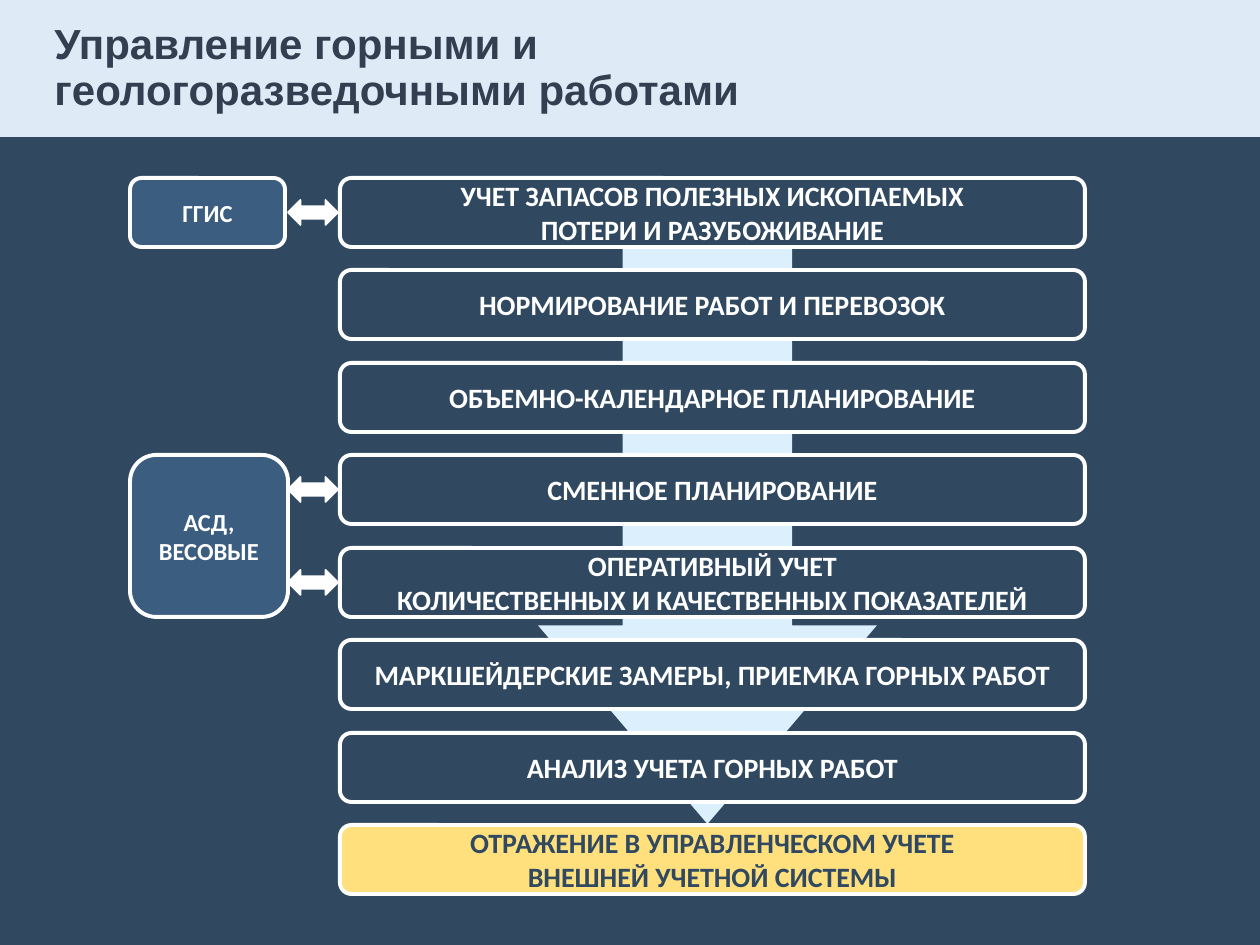
from pptx import Presentation
from pptx import util as u
from pptx.dml.color import RGBColor
from pptx.enum import shapes, text

PX = u.Inches(1) // 126
NAVY = RGBColor(0x30, 0x49, 0x61)
BLUE = RGBColor(0x3A, 0x5D, 0x80)
PALE = RGBColor(0xDE, 0xEB, 0xF7)
ICE = RGBColor(0xDB, 0xF0, 0xFC)
YELLOW = RGBColor(0xFF, 0xE0, 0x7D)
SLATE = RGBColor(0x33, 0x3F, 0x50)
WHITE = RGBColor(0xFF, 0xFF, 0xFF)
KIND = shapes.MSO_SHAPE

STEPS = [
    "УЧЕТ ЗАПАСОВ ПОЛЕЗНЫХ ИСКОПАЕМЫХ\vПОТЕРИ И РАЗУБОЖИВАНИЕ",
    "НОРМИРОВАНИЕ РАБОТ И ПЕРЕВОЗОК",
    "ОБЪЕМНО-КАЛЕНДАРНОЕ ПЛАНИРОВАНИЕ",
    "СМЕННОЕ ПЛАНИРОВАНИЕ",
    "ОПЕРАТИВНЫЙ УЧЕТ\vКОЛИЧЕСТВЕННЫХ И КАЧЕСТВЕННЫХ ПОКАЗАТЕЛЕЙ",
    "МАРКШЕЙДЕРСКИЕ ЗАМЕРЫ, ПРИЕМКА ГОРНЫХ РАБОТ",
    "АНАЛИЗ УЧЕТА ГОРНЫХ РАБОТ",
    "ОТРАЖЕНИЕ В УПРАВЛЕНЧЕСКОМ УЧЕТЕ\vВНЕШНЕЙ УЧЕТНОЙ СИСТЕМЫ",
]
STEP_H = 69


def step_top(top, index):
    return top + index * 185 // 2


def emu(*lengths):
    return [n * PX for n in lengths]


def write(sp, words, size=16, color=WHITE, font="Calibri",
          align=text.PP_ALIGN.CENTER, spacing=None):
    tf = sp.text_frame
    tf.word_wrap = True
    tf.vertical_anchor = text.MSO_ANCHOR.MIDDLE
    p = tf.paragraphs[0]
    p.text = words
    p.alignment = align
    p.line_spacing = spacing
    for f in [p.font] + [r.font for r in p.runs]:
        f.name, f.size, f.bold = font, u.Pt(size), True
        f.color.rgb = color


def draw(s, kind, box, fill, line=None):
    sp = s.shapes.add_shape(kind, *emu(*box))
    sp.shadow.inherit = False
    sp.fill.solid()
    sp.fill.fore_color.rgb = fill
    if line:
        sp.line.color.rgb = WHITE
        sp.line.width = u.Pt(line)
    else:
        sp.line.fill.background()
    return sp


def header(s, x, y, w, h):
    draw(s, KIND.RECTANGLE, (x, y, w, h), PALE)
    title = s.shapes.add_textbox(*emu(x + 42, y + 20, 764, 98))
    write(title, "Управление горными и геологоразведочными работами", size=24,
          color=SLATE, font="Arial", align=text.PP_ALIGN.LEFT, spacing=0.9)


def process(s, x, y, w):
    arrow = draw(s, KIND.DOWN_ARROW, (x + 198, y + 68, 339, 578), ICE)
    arrow.adjustments[1] = 0.586
    for i, words in enumerate(STEPS):
        last = i == len(STEPS) - 1
        box = (x, step_top(y, i), w, STEP_H)
        sp = draw(s, KIND.ROUNDED_RECTANGLE, box, YELLOW if last else NAVY, 2.25)
        write(sp, words, color=NAVY if last else WHITE)


def sources(s, x, y):
    systems = [("ГГИС", 155, 0, 0), ("АСД, ВЕСОВЫЕ", 158, 3, 4)]
    for words, w, first, last in systems:
        top = step_top(y, first)
        box = (x, top, w, step_top(y, last) + STEP_H - top)
        write(draw(s, KIND.ROUNDED_RECTANGLE, box, BLUE, 2.25), words, size=14)
        for i in range(first, last + 1):
            draw(s, KIND.LEFT_RIGHT_ARROW,
                 (x + 158, step_top(y, i) + 22, 50, 25), WHITE, 1)


def main():
    prs = Presentation()
    prs.slide_width, prs.slide_height = emu(1260, 945)
    s = prs.slides.add_slide(prs.slide_layouts[6])
    s.background.fill.solid()
    s.background.fill.fore_color.rgb = NAVY
    header(s, 0, 0, 1260, 137)
    process(s, 340, 178, 745)
    sources(s, 130, 178)
    prs.save("out.pptx")


if __name__ == "__main__":
    main()
